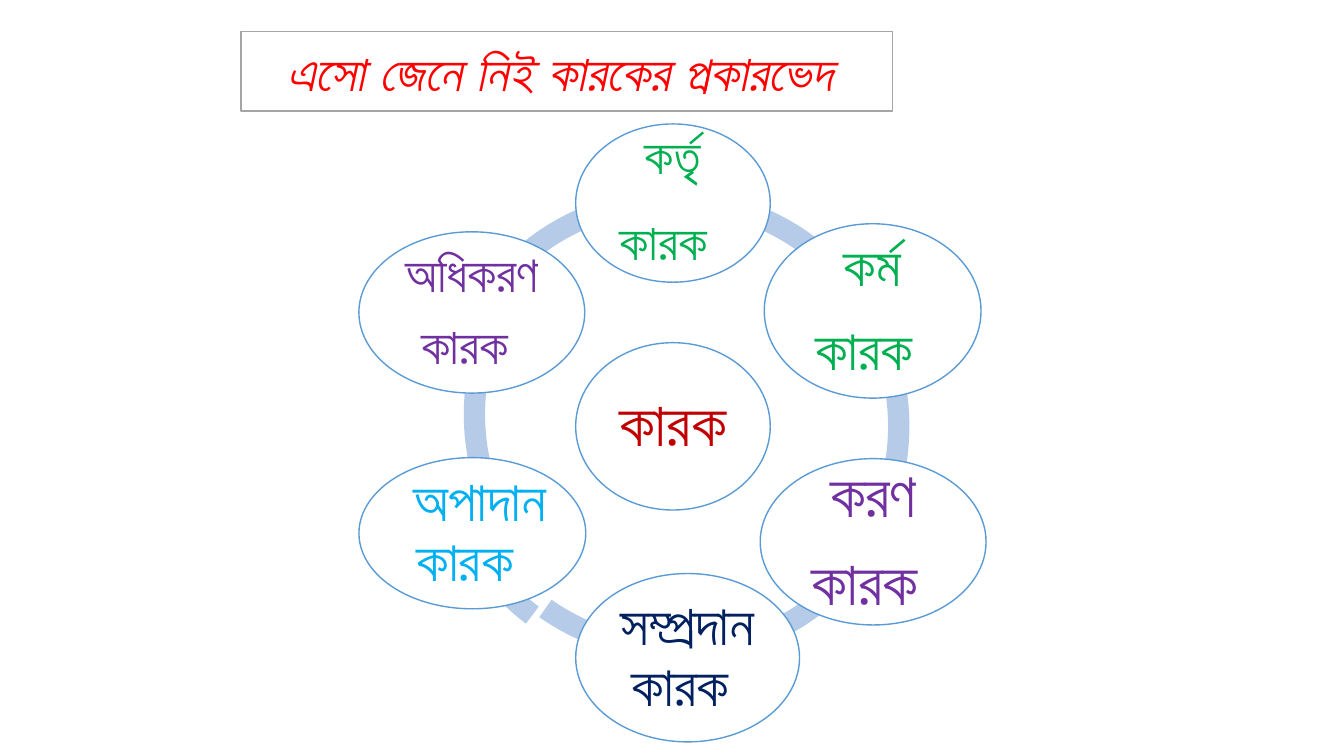
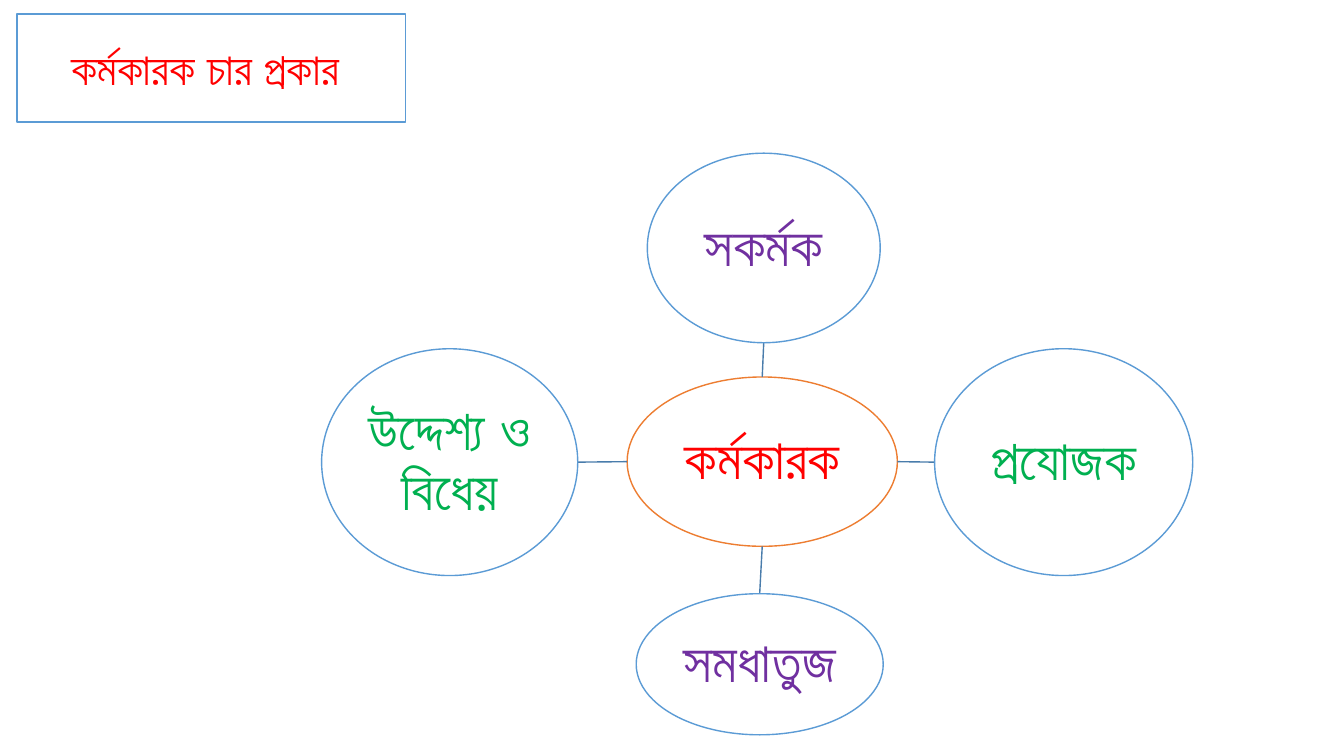
from lxml.etree import SubElement
from pptx import Presentation
from pptx.dml.color import RGBColor
from pptx.enum.shapes import MSO_CONNECTOR as Line, MSO_SHAPE as Shape
from pptx.enum.text import MSO_ANCHOR as Anchor, MSO_AUTO_SIZE as Auto, PP_ALIGN as Align
from pptx.oxml.ns import qn
from pptx.util import Pt

PX = 9144
FONT = "Roboto"
C = {"white": "FFFFFF", "gray": "A5A5A5", "blue": "5B9BD5", "orange": "ED7D31",
     "ring": "B5CBE7", "link": "497CAB", "red": "FF0000", "crimson": "C00000",
     "green": "00B050", "purple": "7030A0", "navy": "002060", "sky": "00B0F0"}

ARC_SIZE = 470
ARC_THICKNESS = 0.045
ARCS = [
    (428, 196, 126.97, 162.5),
    (435, 185, 90.92, 125.08),
    (436, 188, 52.46, 91.45),
    (431, 188, 17.91, 51.72),
    (432, 188, 198, 18),
    (460, 176, 161.27, 196.59),
]

KARAK_TITLE = ("এসো জেনে নিই কারকের প্রকারভেদ ", (239, 31, 646, 79), "rect", "gray", 36)
KARAK_OVALS = [
    ((571, 340, 193, 166), "crimson", 44, [[("কারক", 44)]]),
    ((571, 123, 193, 157), "green", 36, [[("কর্তৃ", 36)], [("কারক", 36), (" ", 48)]]),
    ((758, 222, 215, 173), "green", 40, [[("কর্ম", 40)], [("কারক", 40), (" ", 44)]]),
    ((754, 455, 224, 165), "purple", 44, [[("করণ", 44)], [("কারক ", 44)]]),
    ((571, 569, 222, 167), "navy", 40, [[("সম্প্রদান কারক ", 40)]]),
    ((356, 454, 225, 150), "sky", 40, [[(" অপাদান কারক ", 40)]]),
    ((356, 230, 224, 160), "purple", 36, [[("অধিকরণ", 36)], [("কারক ", 36)]]),
]

KARMA_TITLE = ("কর্মকারক চার প্রকার ", (17, 14, 385, 107), "rightArrow", "blue", 32)
KARMA_HUB = ("কর্মকারক", (622, 374, 268, 168), "red")
KARMA_OVALS = [
    ("সকর্মক", (642, 152, 231, 188), "purple", "top"),
    ("প্রযোজক", (927, 346, 256, 225), "green", "right"),
    ("সমধাতুজ", (631, 589, 245, 140), "purple", "bottom"),
    ("উদ্দেশ্য ও বিধেয়", (319, 346, 254, 225), "green", "left"),
]
OPPOSITE = {"top": "bottom", "bottom": "top", "left": "right", "right": "left"}


def emu(*lengths):
    return [round(v * PX) for v in lengths]


def rgb(name):
    return RGBColor.from_string(C[name])


def paint(sp, fill, line=None):
    sp.fill.solid()
    sp.fill.fore_color.rgb = rgb(fill)
    if line:
        sp.line.color.rgb = rgb(line)
        sp.line.width = Pt(1)
    else:
        sp.line.fill.background()


def style(p, size, color, italic=False):
    p.alignment = Align.CENTER
    f = p.font
    f.name, f.size, f.bold, f.italic = FONT, Pt(size), True, italic
    f.color.rgb = rgb(color)


def set_title(slide, text, box, geometry, line, size, italic=False):
    sp = slide.shapes.title
    sp.left, sp.top, sp.width, sp.height = emu(*box)
    geom = SubElement(sp._element.spPr, qn("a:prstGeom"), prst=geometry)
    SubElement(geom, qn("a:avLst"))
    paint(sp, "white", line)
    tf = sp.text_frame
    tf.auto_size, tf.vertical_anchor = Auto.NONE, Anchor.MIDDLE
    tf.text = text
    style(tf.paragraphs[0], size, "red", italic)


def add_arc(slide, x, y, start, end):
    sp = slide.shapes.add_shape(Shape.BLOCK_ARC, *emu(x, y, ARC_SIZE, ARC_SIZE))
    sp.shadow.inherit = False
    for i, value in enumerate((start * 0.6, end * 0.6, ARC_THICKNESS)):
        sp.adjustments[i] = value
    paint(sp, "ring")


def add_oval(slide, box, color, size, paragraphs, line="blue", inset=6):
    sp = slide.shapes.add_shape(Shape.OVAL, *emu(*box))
    sp.shadow.inherit = False
    paint(sp, "white", line)
    tf = sp.text_frame
    tf.word_wrap, tf.vertical_anchor = True, Anchor.MIDDLE
    tf.margin_left = tf.margin_right = tf.margin_top = tf.margin_bottom = inset * PX
    for i, runs in enumerate(paragraphs):
        p = tf.add_paragraph() if i else tf.paragraphs[0]
        p.line_spacing = 0.9
        after = SubElement(p._p.get_or_add_pPr(), qn("a:spcAft"))
        SubElement(after, qn("a:spcPct"), val="35000")
        style(p, size, color)
        for text, run_size in runs:
            r = p.add_run()
            r.text = text
            if run_size != size:
                r.font.size = Pt(run_size)


def edge(box, side):
    x, y, w, h = box
    return {"top": (x + w / 2, y), "bottom": (x + w / 2, y + h),
            "left": (x, y + h / 2), "right": (x + w, y + h / 2)}[side]


def add_link(slide, start, end):
    cx = slide.shapes.add_connector(Line.STRAIGHT, *emu(*start, *end))
    cx.line.color.rgb = rgb("link")
    cx.line.width = Pt(1)
    SubElement(cx._element.spPr, qn("a:effectLst"))


def build_karak(slide):
    set_title(slide, *KARAK_TITLE, italic=True)
    for arc in ARCS:
        add_arc(slide, *arc)
    for oval in KARAK_OVALS:
        add_oval(slide, *oval)


def build_karma(slide):
    set_title(slide, *KARMA_TITLE)
    hub_text, hub, hub_color = KARMA_HUB
    add_oval(slide, hub, hub_color, 40, [[(hub_text, 40)]], "orange", 3)
    for text, box, color, side in KARMA_OVALS:
        add_link(slide, edge(hub, side), edge(box, OPPOSITE[side]))
        add_oval(slide, box, color, 40, [[(text, 40)]], inset=3)


def main():
    prs = Presentation()
    prs.slide_width, prs.slide_height = emu(1333, 750)
    for build in (build_karak, build_karma):
        build(prs.slides.add_slide(prs.slide_layouts[5]))
    prs.save("out.pptx")


if __name__ == "__main__":
    main()
